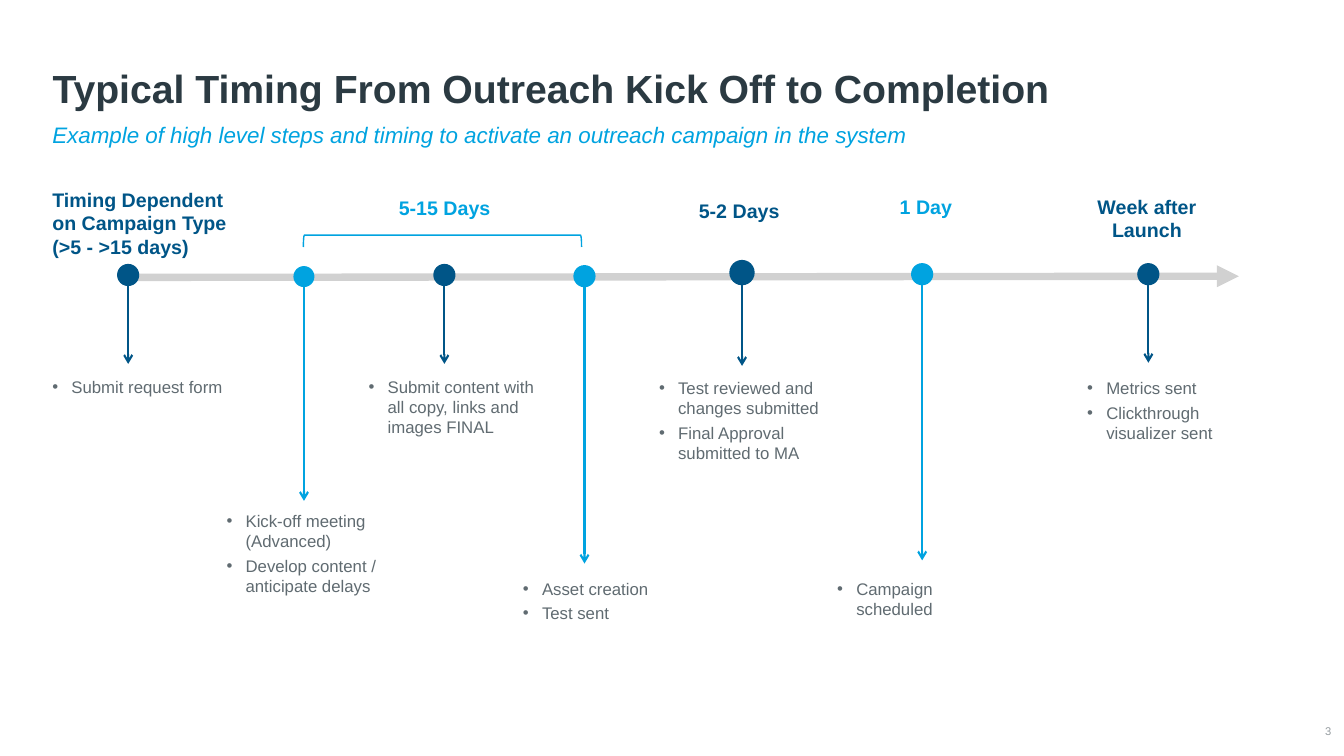
"""Build a slide showing the outreach campaign timeline from kick-off to completion."""
from dataclasses import dataclass

from lxml import etree
from pptx import Presentation
from pptx import util as u
from pptx.dml.color import RGBColor
from pptx.enum import shapes, text
from pptx.oxml.ns import qn


@dataclass(frozen=True)
class Theme:
    font: str = "Arial"
    ink: str = "2B3A42"
    body: str = "606B71"
    muted: str = "959CA0"
    axis: str = "D1D1D1"
    navy: str = "005587"
    sky: str = "00A3E0"
    title_size: float = 28
    subtitle_size: float = 16
    heading_size: float = 14
    step_size: float = 12
    number_size: float = 8
    axis_width: float = 5.25
    stem_width: float = 1.5
    bracket_width: float = 1


@dataclass(frozen=True)
class Box:
    left: float
    top: float
    width: float
    height: float

    def emu(self) -> tuple:
        return tuple(u.Cm(side) for side in (self.left, self.top, self.width, self.height))


@dataclass(frozen=True)
class Milestone:
    x: float
    y: float
    diameter: float
    stem_end: float
    color: str
    steps_box: Box
    steps: tuple


@dataclass(frozen=True)
class Heading:
    label: str
    box: Box
    color: str
    align: text.PP_ALIGN = text.PP_ALIGN.CENTER


THEME = Theme()
LEFT = text.PP_ALIGN.LEFT
STEM_OFFSET = 0.18
STEP_INDENT = 0.48

MILESTONES = (
    Milestone(3.23, 6.93, 0.56, 9.17, THEME.navy, Box(1.07, 9.37, 4.98, 0.76),
              ("Submit request form",)),
    Milestone(7.66, 6.97, 0.53, 12.62, THEME.sky, Box(5.46, 12.75, 5.94, 2.41),
              ("Kick-off meeting (Advanced)", "Develop content / anticipate delays")),
    Milestone(11.2, 6.93, 0.56, 9.17, THEME.navy, Box(9.04, 9.37, 5.18, 1.8),
              ("Submit content with all copy, links and images FINAL",)),
    Milestone(14.73, 6.96, 0.56, 14.2, THEME.sky, Box(12.93, 14.45, 3.91, 1.4),
              ("Asset creation", "Test sent")),
    Milestone(18.7, 6.87, 0.64, 9.22, THEME.navy, Box(16.36, 9.4, 4.57, 2.41),
              ("Test reviewed and changes submitted", "Final Approval submitted to MA")),
    Milestone(23.24, 6.91, 0.56, 14.12, THEME.sky, Box(20.85, 14.45, 4.95, 0.76),
              ("Campaign scheduled",)),
    Milestone(28.94, 6.91, 0.56, 9.14, THEME.navy, Box(27.15, 9.4, 4.8, 1.9),
              ("Metrics sent", "Clickthrough visualizer sent")),
)

HEADINGS = (
    Heading("Timing Dependent on Campaign Type (>5 - >15 days)",
            Box(1.07, 4.6, 5.18, 2.06), THEME.navy, LEFT),
    Heading("5-15 Days", Box(9.8, 4.8, 4.88, 0.86), THEME.sky, LEFT),
    Heading("5-2 Days", Box(16.99, 4.88, 3.28, 0.86), THEME.navy),
    Heading("1 Day", Box(22.05, 4.78, 2.57, 0.86), THEME.sky),
    Heading("Week after Launch", Box(27.38, 4.78, 3.05, 1.45), THEME.navy),
)


def style(paragraph, size: float, color: str, bold: bool = False, italic: bool = False) -> None:
    font = paragraph.font
    font.name, font.size = THEME.font, u.Pt(size)
    font.bold, font.italic = bold, italic
    font.color.rgb = RGBColor.from_string(color)


def add_text(slide, box: Box, lines: tuple):
    frame = slide.shapes.add_textbox(*box.emu()).text_frame
    frame.word_wrap = True
    frame.text = "\n".join(lines)
    return frame


def add_arrow(slide, start: tuple, end: tuple, color: str, width: float, head: str) -> None:
    arrow = slide.shapes.add_connector(
        shapes.MSO_CONNECTOR.STRAIGHT, *(u.Cm(value) for value in start + end))
    arrow.line.color.rgb = RGBColor.from_string(color)
    arrow.line.width = u.Pt(width)
    properties = arrow.line._get_or_add_ln()
    etree.SubElement(properties, qn("a:tailEnd"), type=head)
    etree.SubElement(arrow._element.spPr, qn("a:effectLst"))


def add_title(slide) -> None:
    title = slide.shapes.title
    title.left, title.top, title.width, title.height = Box(1.07, 0.81, 31.5, 2.13).emu()
    frame = title.text_frame
    frame.text = "Typical Timing From Outreach Kick Off to Completion"
    frame.auto_size = text.MSO_AUTO_SIZE.NONE
    frame.vertical_anchor = text.MSO_ANCHOR.BOTTOM
    paragraph = frame.paragraphs[0]
    paragraph.alignment, paragraph.line_spacing = LEFT, 0.9
    style(paragraph, THEME.title_size, THEME.ink, bold=True)


def add_subtitle(slide) -> None:
    line = "Example of high level steps and timing to activate an outreach campaign in the system"
    paragraph = add_text(slide, Box(1.07, 3, 31.5, 1.12), (line,)).paragraphs[0]
    paragraph.line_spacing = 0.9
    style(paragraph, THEME.subtitle_size, THEME.sky, italic=True)


def add_slide_number(slide) -> None:
    frame = add_text(slide, Box(32.56, 18.19, 0.99, 0.48), ("3",))
    frame.margin_left = frame.margin_right = frame.margin_top = frame.margin_bottom = 0
    frame.vertical_anchor = text.MSO_ANCHOR.MIDDLE
    frame.paragraphs[0].alignment = text.PP_ALIGN.RIGHT
    style(frame.paragraphs[0], THEME.number_size, THEME.muted)


def add_heading(slide, heading: Heading) -> None:
    paragraph = add_text(slide, heading.box, (heading.label,)).paragraphs[0]
    paragraph.alignment = heading.align
    style(paragraph, THEME.heading_size, heading.color, bold=True)


def add_bracket(slide) -> None:
    bracket = slide.shapes.add_shape(
        shapes.MSO_SHAPE.LEFT_BRACKET, *Box(11, 2.57, 0.3, 7.01).emu())
    bracket.rotation = 90
    bracket.shadow.inherit = False
    bracket.fill.background()
    bracket.line.color.rgb = RGBColor.from_string(THEME.sky)
    bracket.line.width = u.Pt(THEME.bracket_width)


def add_milestone(slide, milestone: Milestone) -> None:
    add_arrow(slide, (milestone.x, milestone.y + STEM_OFFSET), (milestone.x, milestone.stem_end),
              milestone.color, THEME.stem_width, "arrow")
    radius = milestone.diameter / 2
    dot = slide.shapes.add_shape(shapes.MSO_SHAPE.OVAL, *Box(
        milestone.x - radius, milestone.y - radius, milestone.diameter, milestone.diameter).emu())
    dot.shadow.inherit = False
    dot.fill.solid()
    dot.fill.fore_color.rgb = RGBColor.from_string(milestone.color)
    dot.line.fill.background()
    for paragraph in add_text(slide, milestone.steps_box, milestone.steps).paragraphs:
        properties = paragraph._p.get_or_add_pPr()
        properties.set("marL", str(u.Cm(STEP_INDENT)))
        properties.set("indent", str(-u.Cm(STEP_INDENT)))
        etree.SubElement(properties, qn("a:buFont"), typeface=THEME.font)
        etree.SubElement(properties, qn("a:buChar"), char="•")
        paragraph.space_after = u.Pt(3)
        style(paragraph, THEME.step_size, THEME.body)


def main() -> None:
    deck = Presentation()
    deck.slide_width, deck.slide_height = u.Cm(33.87), u.Cm(19.05)
    slide = deck.slides.add_slide(deck.slide_layouts[5])
    add_title(slide)
    add_subtitle(slide)
    add_slide_number(slide)
    add_arrow(slide, (3.15, 6.99), (31.22, 6.96), THEME.axis, THEME.axis_width, "triangle")
    for milestone in MILESTONES:
        add_milestone(slide, milestone)
    for heading in HEADINGS:
        add_heading(slide, heading)
    add_bracket(slide)
    deck.save("out.pptx")


if __name__ == "__main__":
    main()
